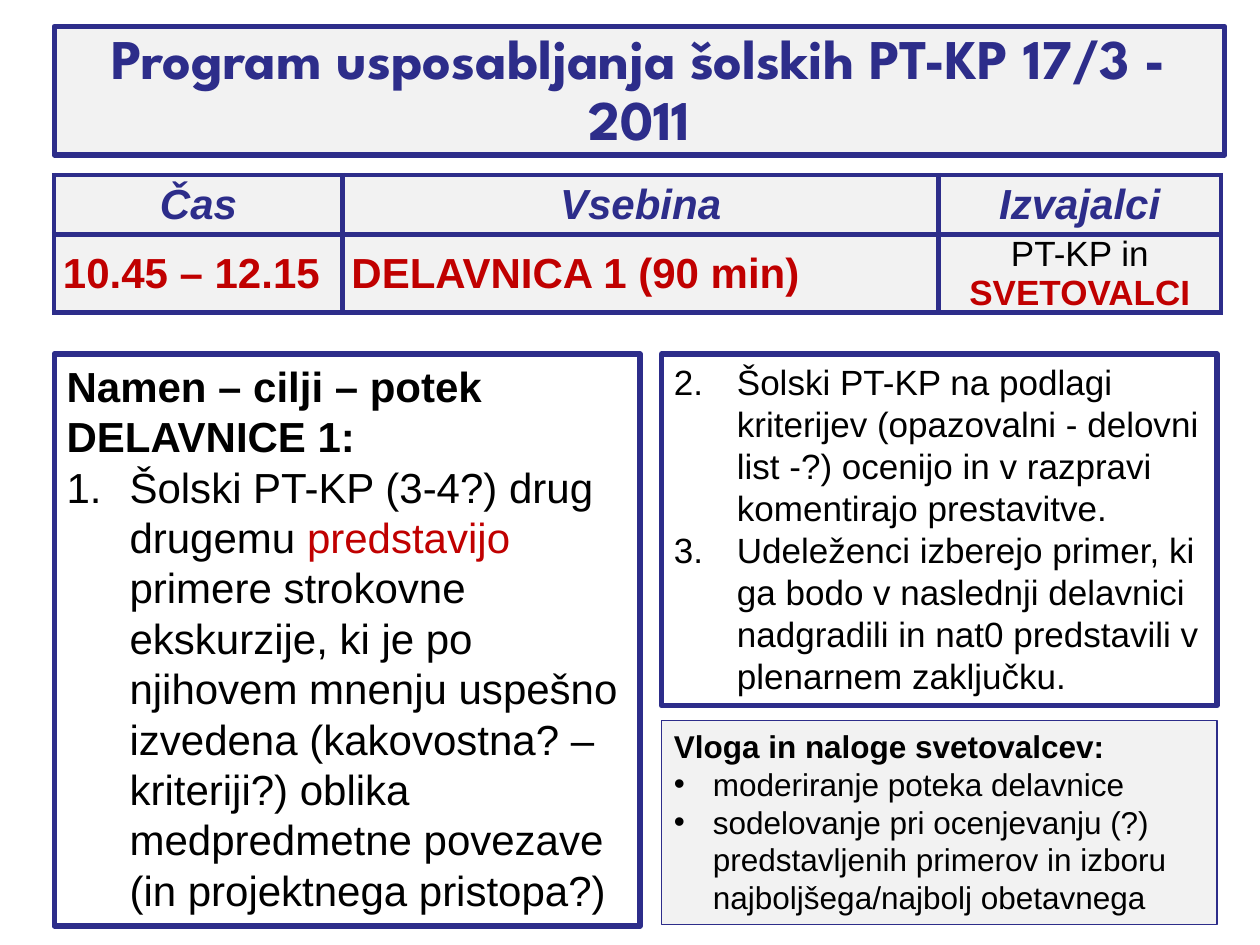
from lxml import etree
from pptx import Presentation
from pptx.dml.color import RGBColor
from pptx.enum import shapes, text
from pptx.oxml import ns
from pptx.util import Inches, Pt

NAVY = RGBColor(0x2D, 0x2D, 0x8A)
RED = RGBColor(0xC0, 0x00, 0x00)
BLACK = RGBColor(0x00, 0x00, 0x00)
WHITE = RGBColor(0xFF, 0xFF, 0xFF)
GREY = RGBColor(0xF2, 0xF2, 0xF2)
CENTER, LEFT = text.PP_ALIGN.CENTER, text.PP_ALIGN.LEFT


def add_run(paragraph, words, size, color=BLACK, bold=False, italic=False, face="Arial"):
    """Append one formatted run to a paragraph."""
    run = paragraph.add_run()
    run.text = words
    run.font.size, run.font.name = Pt(size), face
    run.font.bold, run.font.italic = bold, italic
    run.font.color.rgb = color


def set_bullet(paragraph, indent, start=None):
    """Number a paragraph from start, or give it a dot when start is None."""
    properties = paragraph._p.get_or_add_pPr()
    properties.set("marL", str(Inches(indent)))
    properties.set("indent", str(-Inches(indent)))
    font = etree.SubElement(properties, ns.qn("a:buFont"))
    font.set("typeface", "Arial")
    if start is None:
        etree.SubElement(properties, ns.qn("a:buChar")).set("char", "•")
    else:
        number = etree.SubElement(properties, ns.qn("a:buAutoNum"))
        number.set("type", "arabicPeriod")
        number.set("startAt", str(start))


def frame(shape, fill, weight):
    """Fill a shape and outline it in navy."""
    shape.fill.solid()
    shape.fill.fore_color.rgb = fill
    shape.line.color.rgb = NAVY
    shape.line.width = Pt(weight)


def place_title(slide, box, words):
    """Move the title placeholder into the box and format it."""
    title = slide.shapes.title
    title.left, title.top, title.width, title.height = map(Inches, box)
    frame(title, GREY, 3)
    body = title.text_frame
    body.word_wrap, body.auto_size = True, text.MSO_AUTO_SIZE.NONE
    body.vertical_anchor = text.MSO_ANCHOR.MIDDLE
    heading = body.paragraphs[0]
    heading.alignment, heading.line_spacing = CENTER, Pt(35)
    add_run(heading, words, 32, NAVY, True, face="League Spartan")


def border_cell(cell):
    """Draw navy borders on all four sides of a cell."""
    properties = cell._tc.get_or_add_tcPr()
    for position, side in enumerate(("lnL", "lnR", "lnT", "lnB")):
        line = etree.Element(ns.qn(f"a:{side}"), w=str(Pt(3)))
        paint = etree.SubElement(line, ns.qn("a:solidFill"))
        etree.SubElement(paint, ns.qn("a:srgbClr")).set("val", str(NAVY))
        properties.insert(position, line)


def place_schedule(slide, box, widths, heights, rows):
    """Build the schedule table; each cell is an alignment and its runs."""
    table = slide.shapes.add_table(len(rows), len(widths), *map(Inches, box)).table
    for column, width in zip(table.columns, widths):
        column.width = Inches(width)
    for row, height, entries in zip(table.rows, heights, rows):
        row.height = Inches(height)
        for cell, (alignment, runs) in zip(row.cells, entries):
            cell.fill.solid()
            cell.fill.fore_color.rgb = GREY
            cell.margin_left = cell.margin_right = Inches(0.07)
            cell.margin_top = cell.margin_bottom = 0
            cell.vertical_anchor = text.MSO_ANCHOR.MIDDLE
            paragraph = cell.text_frame.paragraphs[0]
            paragraph.alignment = alignment
            for run in runs:
                add_run(paragraph, *run)
            border_cell(cell)


def place_panel(slide, box, fill, weight, size, indent, items, heading=None, start=None):
    """Build a framed panel: an optional bold heading over a list of run lists."""
    panel = slide.shapes.add_shape(shapes.MSO_SHAPE.RECTANGLE, *map(Inches, box))
    panel.shadow.inherit = False
    frame(panel, fill, weight)
    body = panel.text_frame
    body.word_wrap, body.vertical_anchor = True, text.MSO_ANCHOR.TOP
    paragraph = body.paragraphs[0]
    paragraph.alignment = LEFT
    if heading:
        add_run(paragraph, heading, size, bold=True)
    for index, runs in enumerate(items):
        if index or heading:
            paragraph = body.add_paragraph()
        set_bullet(paragraph, indent, start)
        paragraph.alignment = LEFT
        for words, color in runs:
            add_run(paragraph, words, size, color)


def main():
    """Build the workshop slide and save it."""
    deck = Presentation()
    deck.slide_width, deck.slide_height = Inches(10), Inches(7.5)
    slide = deck.slides.add_slide(deck.slide_layouts[5])
    place_title(slide, (0.43, 0.21, 9.29, 1.02),
                "Program usposabljanja šolskih PT-KP 17/3 - 2011")
    headers = [(CENTER, [(name, 24, NAVY, True, True)])
               for name in ("Čas", "Vsebina", "Izvajalci")]
    workshop = [
        (LEFT, [("10.45 – 12.15", 24, RED, True)]),
        (LEFT, [("DELAVNICA 1 (90 min)", 24, RED, True)]),
        (CENTER, [("PT-KP in ", 20), ("SVETOVALCI", 20, RED, True)]),
    ]
    place_schedule(slide, (0.43, 1.39, 9.26, 1.08), (2.29, 4.73, 2.24),
                   (0.47, 0.61), (headers, workshop))
    place_panel(slide, (0.43, 2.81, 4.65, 4.54), WHITE, 3, 24, 0.5, [
        [("Šolski PT-KP (3-4?) drug drugemu ", BLACK), ("predstavijo", RED),
         (" primere strokovne ekskurzije, ki je po njihovem mnenju uspešno izvedena "
          "(kakovostna? – kriteriji?) oblika medpredmetne povezave "
          "(in projektnega pristopa?)", BLACK)],
    ], heading="Namen – cilji – potek DELAVNICE 1:", start=1)
    place_panel(slide, (5.25, 5.72, 4.41, 1.62), GREY, 0.75, 18, 0.31, [
        [("moderiranje poteka delavnice", BLACK)],
        [("sodelovanje pri ocenjevanju (?) predstavljenih primerov in izboru "
          "najboljšega/najbolj obetavnega", BLACK)],
    ], heading="Vloga in naloge svetovalcev:")
    place_panel(slide, (5.25, 2.81, 4.41, 2.79), WHITE, 3, 20, 0.5, [
        [("Šolski PT-KP na podlagi kriterijev (opazovalni - delovni list -?) "
          "ocenijo in v razpravi komentirajo prestavitve.", BLACK)],
        [("Udeleženci izberejo primer, ki ga bodo v naslednji delavnici nadgradili "
          "in nat0 predstavili v plenarnem zaključku.", BLACK)],
    ], start=2)
    deck.save("out.pptx")


if __name__ == "__main__":
    main()
